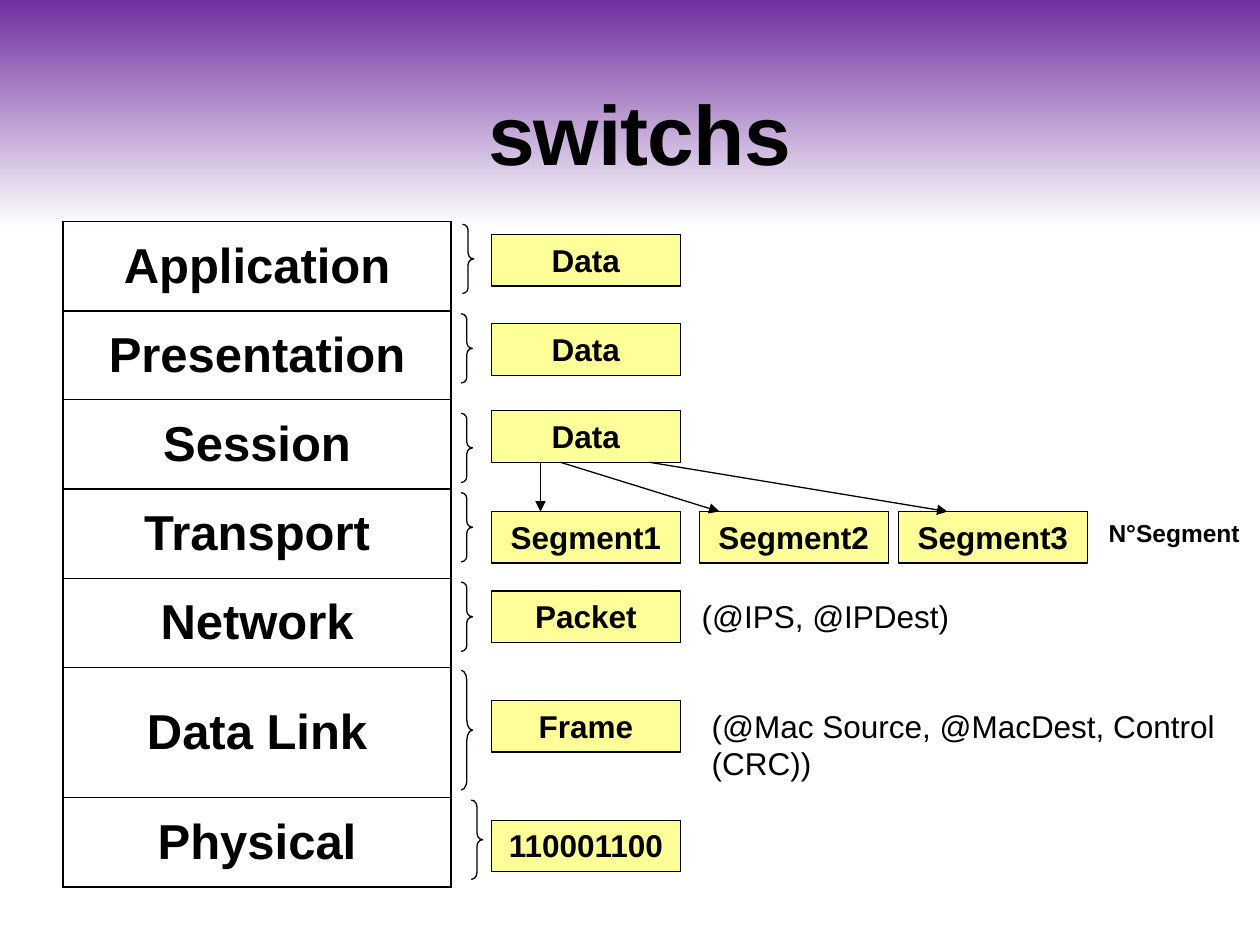
from dataclasses import dataclass

import pptx
import pptx.dml.color
import pptx.enum.shapes
import pptx.enum.text
import pptx.oxml
import pptx.oxml.ns
import pptx.util

Inches = pptx.util.Inches
Align = pptx.enum.text.PP_ALIGN
Anchor = pptx.enum.text.MSO_ANCHOR
Preset = pptx.enum.shapes.MSO_SHAPE


def color(value):
    return pptx.dml.color.RGBColor.from_string(value)


def drawing_element(xml):
    """Build one element given as '<a:name .../>' in the drawing namespace."""
    name, rest = xml[1:].split(" ", 1)
    return pptx.oxml.parse_xml(f"<{name} {pptx.oxml.ns.nsdecls('a')} {rest}")


@dataclass(frozen=True)
class Theme:
    font: str = "Arial"
    ink: str = "000000"
    unit_fill: str = "FFFF99"
    banner: str = "7030A0"
    paper: str = "FFFFFF"
    title_size: int = 48
    layer_size: int = 28
    body_size: int = 18
    note_size: int = 14
    line_width: float = 0.75
    border_width: int = 1


class SlideBuilder:
    def __init__(self, slide, theme):
        self.slide = slide
        self.theme = theme

    def background(self):
        """Fade from the banner colour to paper over the top quarter."""
        fill = self.slide.background.fill
        fill.gradient()
        fill.gradient_angle = 270
        stops = zip(fill.gradient_stops, (self.theme.banner, self.theme.paper), (0, 0.24))
        for stop, value, position in stops:
            stop.color.rgb = color(value)
            stop.position = position

    def add_text(self, frame, text, size, bold=True, align=Align.CENTER):
        paragraph = frame.paragraphs[0]
        paragraph.alignment = align
        run = paragraph.add_run()
        run.text = text
        run.font.name = self.theme.font
        run.font.size = pptx.util.Pt(size)
        run.font.bold = bold
        run.font.color.rgb = color(self.theme.ink)
        return run

    def outline(self, shape):
        shape.line.color.rgb = color(self.theme.ink)
        shape.line.width = pptx.util.Pt(self.theme.line_width)

    def text_box(self, left, top, width, height):
        box = self.slide.shapes.add_textbox(
            Inches(left), Inches(top), Inches(width), Inches(height))
        box.text_frame.word_wrap = True
        return box.text_frame

    def title(self, text, left, top, width, height):
        frame = self.text_box(left, top, width, height)
        frame.vertical_anchor = Anchor.BOTTOM
        run = self.add_text(frame, text, self.theme.title_size)
        run.font._element.set("spc", "-50")
        frame.paragraphs[0].line_spacing = 0.85

    def note(self, text, left, top, width, height, size, bold=False):
        frame = self.text_box(left, top, width, height)
        self.add_text(frame, text, size, bold, Align.LEFT)

    def preset(self, kind, left, top, width, height):
        shape = self.slide.shapes.add_shape(
            kind, Inches(left), Inches(top), Inches(width), Inches(height))
        shape.shadow.inherit = False
        self.outline(shape)
        return shape

    def data_unit(self, text, left, top, width=1.5, height=0.41):
        shape = self.preset(Preset.RECTANGLE, left, top, width, height)
        shape.fill.solid()
        shape.fill.fore_color.rgb = color(self.theme.unit_fill)
        shape.text_frame.word_wrap = True
        shape.text_frame.vertical_anchor = Anchor.TOP
        self.add_text(shape.text_frame, text, self.theme.body_size)

    def brace(self, left, top, height, curve):
        shape = self.preset(Preset.RIGHT_BRACE, left, top, 0.09, height)
        shape.fill.background()
        shape.adjustments[0] = curve

    def arrow(self, start_x, start_y, end_x, end_y):
        connector = self.slide.shapes.add_connector(
            pptx.enum.shapes.MSO_CONNECTOR.STRAIGHT,
            Inches(start_x), Inches(start_y), Inches(end_x), Inches(end_y))
        self.outline(connector)
        connector.line._get_or_add_ln().append(
            drawing_element('<a:tailEnd type="triangle"/>'))
        connector._element.spPr.append(drawing_element("<a:effectLst />"))

    def layer_table(self, layers, left, top, width):
        """Draw one bordered row for each (name, height) pair."""
        total = sum(height for _, height in layers)
        table = self.slide.shapes.add_table(
            len(layers), 1, Inches(left), Inches(top), Inches(width), Inches(total)).table
        table.first_row = False
        table.horz_banding = False
        border = pptx.util.Pt(self.theme.border_width)
        for row, (name, height) in zip(table.rows, layers):
            row.height = Inches(height)
            cell = row.cells[0]
            cell.vertical_anchor = Anchor.MIDDLE
            self.add_text(cell.text_frame, name, self.theme.layer_size)
            properties = cell._tc.get_or_add_tcPr()
            for side in "LRTB":
                properties.append(drawing_element(
                    f'<a:ln{side} w="{border}"><a:solidFill>'
                    f'<a:srgbClr val="{self.theme.ink}"/></a:solidFill></a:ln{side}>'))
            cell.fill.background()


LAYERS = [("Application", 0.71), ("Presentation", 0.7), ("Session", 0.71),
          ("Transport", 0.71), ("Network", 0.71), ("Data Link", 1.03),
          ("Physical", 0.71)]
BRACES = [(3.67, 1.78, 0.55, 0.52), (3.66, 2.49, 0.55, 0.52),
          (3.66, 3.28, 0.55, 0.52), (3.66, 3.91, 0.55, 0.52),
          (3.66, 4.62, 0.55, 0.52), (3.66, 5.32, 0.95, 0.89),
          (3.74, 6.35, 0.63, 0.59)]
UNIT_LEFT = 3.9
SESSION_BOTTOM = 3.67
SEGMENT_TOP = 4.06
UNITS = [("Data", 1.86), ("Data", 2.57), ("Data", 3.26), ("Packet", 4.69),
         ("Frame", 5.56), ("110001100", 6.51)]
SEGMENT_LEFTS = [UNIT_LEFT, 5.55, 7.13]
ARROWS = [(4.29, 4.29), (4.45, 5.71), (5.16, 7.52)]


def main():
    presentation = pptx.Presentation()
    presentation.slide_width = Inches(10)
    presentation.slide_height = Inches(7.5)
    theme = Theme()
    builder = SlideBuilder(
        presentation.slides.add_slide(presentation.slide_layouts[6]), theme)

    builder.background()
    builder.title("switchs", 0.35, 0.44, 9.45, 1.06)
    builder.layer_table(LAYERS, 0.5, 1.76, 3.08)
    for brace in BRACES:
        builder.brace(*brace)
    for text, top in UNITS:
        builder.data_unit(text, UNIT_LEFT, top)
    for number, left in enumerate(SEGMENT_LEFTS, start=1):
        builder.data_unit(f"Segment{number}", left, SEGMENT_TOP)
    for start_x, end_x in ARROWS:
        builder.arrow(start_x, SESSION_BOTTOM, end_x, SEGMENT_TOP)

    builder.note("N°Segment", 8.7, SEGMENT_TOP, 1.3, 0.39, theme.note_size, bold=True)
    builder.note("(@IPS, @IPDest)", 5.47, 4.69, 2.91, 0.4, theme.body_size)
    builder.note("(@Mac Source, @MacDest, Control (CRC))",
                 5.55, 5.56, 4.45, 0.7, theme.body_size)
    presentation.save("out.pptx")


if __name__ == "__main__":
    main()
